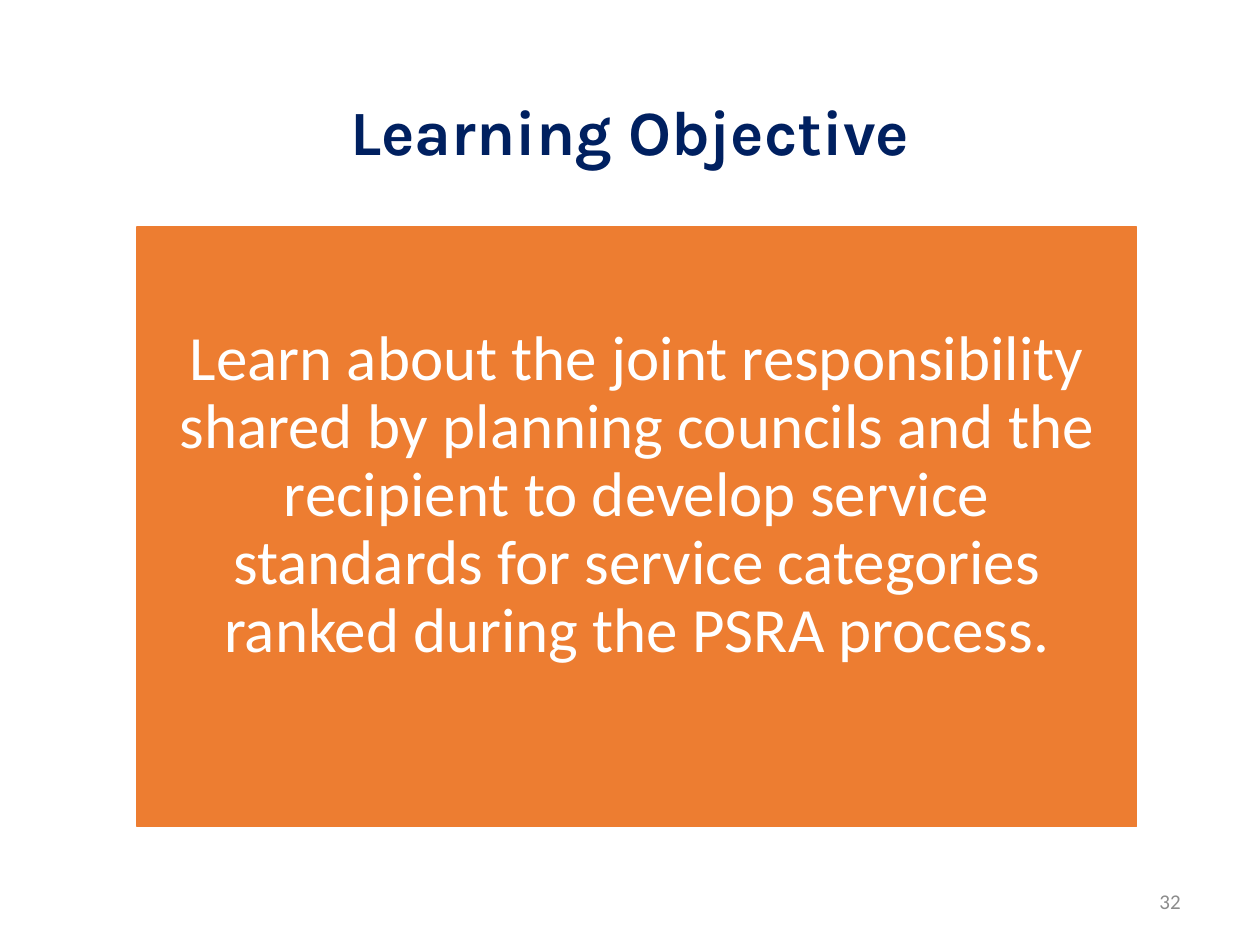
from pptx import Presentation
from pptx.dml.color import RGBColor
from pptx.enum.shapes import MSO_SHAPE
from pptx.enum.text import MSO_ANCHOR, PP_ALIGN
from pptx.util import Pt

NAVY = RGBColor(0x00, 0x20, 0x60)
ORANGE = RGBColor(0xED, 0x7D, 0x31)
WHITE = RGBColor(0xFF, 0xFF, 0xFF)
GRAY = RGBColor(0x8C, 0x8C, 0x8C)
RECTANGLE = MSO_SHAPE.RECTANGLE
MIDDLE = MSO_ANCHOR.MIDDLE
CENTER, RIGHT = PP_ALIGN.CENTER, PP_ALIGN.RIGHT
TITLE_ONLY_LAYOUT = 5


def write_text(shape, text, font_name, size, color, alignment, bold=False):
    """Write one vertically centred paragraph into a shape."""
    frame = shape.text_frame
    frame.word_wrap = True
    frame.vertical_anchor = MIDDLE
    paragraph = frame.paragraphs[0]
    paragraph.alignment = alignment
    run = paragraph.add_run()
    run.text = text
    run.font.name = font_name
    run.font.size = Pt(size)
    run.font.bold = bold
    run.font.color.rgb = color
    return paragraph


def place_title(slide, left, top, width, height):
    title = slide.shapes.title
    title.left, title.top = Pt(left), Pt(top)
    title.width, title.height = Pt(width), Pt(height)
    paragraph = write_text(title, "Learning Objective", "Karla", 36, NAVY,
                           CENTER, bold=True)
    paragraph.line_spacing = 0.9


def add_objective(slide, left, top, width, height):
    panel = slide.shapes.add_shape(RECTANGLE, Pt(left), Pt(top),
                                   Pt(width), Pt(height))
    panel.shadow.inherit = False
    panel.fill.solid()
    panel.fill.fore_color.rgb = ORANGE
    panel.line.color.rgb = ORANGE
    panel.line.width = Pt(1)

    # The deeper bottom inset lifts the text above the middle
    frame = panel.text_frame
    frame.margin_left = frame.margin_right = frame.margin_top = Pt(10.8)
    frame.margin_bottom = Pt(46)
    paragraph = write_text(
        panel,
        "Learn about the joint responsibility shared by planning councils "
        "and the recipient to develop service standards for service "
        "categories ranked during the PSRA process.",
        "Calibri", 36, WHITE, CENTER)
    paragraph.line_spacing = 0.9


def add_slide_number(slide, left, top, width, height):
    number = slide.shapes.add_textbox(Pt(left), Pt(top), Pt(width), Pt(height))
    write_text(number, "32", "Calibri", 12, GRAY, RIGHT)


def main():
    presentation = Presentation()
    presentation.slide_width, presentation.slide_height = Pt(720), Pt(540)
    slide = presentation.slides.add_slide(
        presentation.slide_layouts[TITLE_ONLY_LAYOUT])

    place_title(slide, 23, 25.2, 674, 104.4)
    add_objective(slide, 78.5, 129.6, 571, 342.7)
    add_slide_number(slide, 519.8, 500.4, 162, 28.8)

    presentation.save("out.pptx")


if __name__ == "__main__":
    main()
